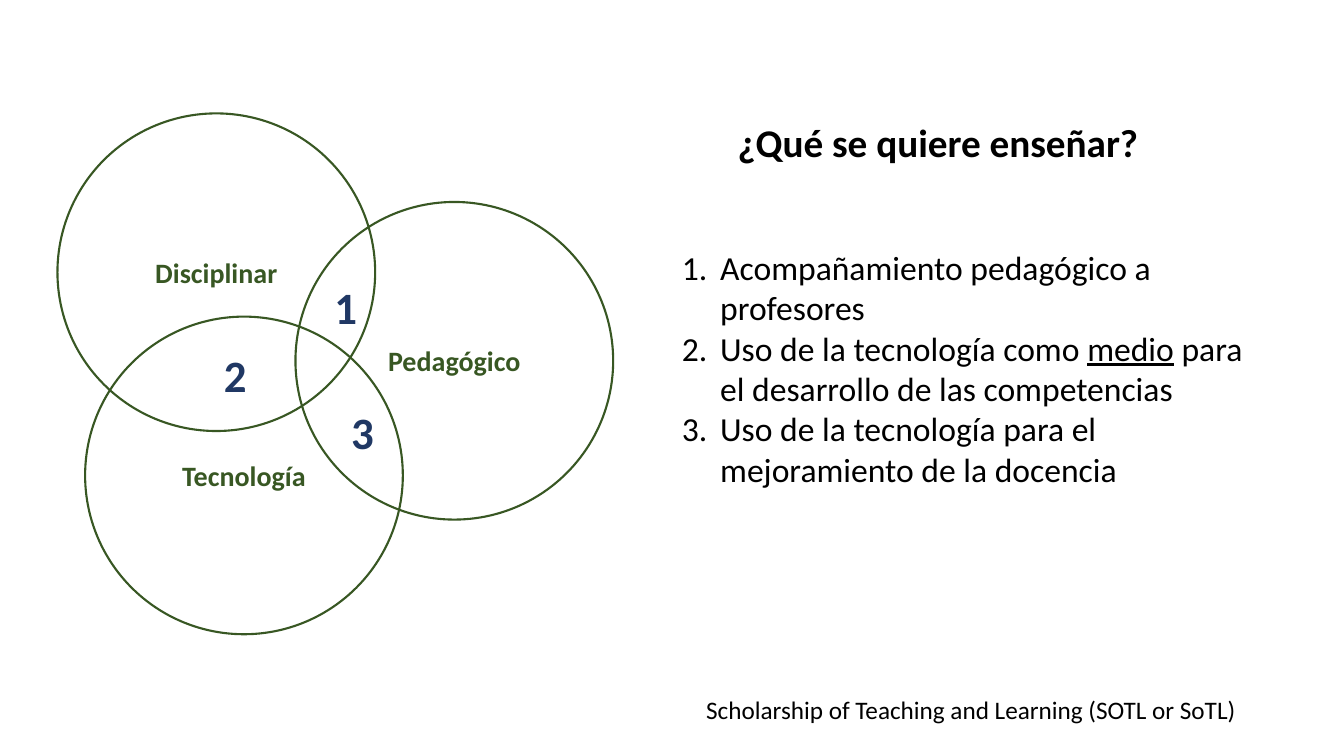
from lxml.etree import SubElement
from pptx import Presentation
from pptx.dml.color import RGBColor
from pptx.enum.shapes import MSO_SHAPE
from pptx.enum.text import MSO_ANCHOR, PP_ALIGN
from pptx.oxml.ns import qn
from pptx.util import Inches, Pt

BLACK = RGBColor(0x00, 0x00, 0x00)
GREEN = RGBColor(0x38, 0x57, 0x23)
NAVY = RGBColor(0x20, 0x38, 0x64)
FONT = "Calibri"

SLIDE_W, SLIDE_H = 13.33, 7.5

# Left and top as shares of the diagram box
CIRCLES = [
    ("Disciplinar", 0, 0),
    ("Pedagógico", 0.43, 0.17),
    ("Tecnología", 0.05, 0.39),
]
DIAMETER = 0.574  # share of the diagram's width
OVERLAPS = [("1", 0.48, 0.31), ("2", 0.28, 0.44), ("3", 0.51, 0.55)]

# Each item is a list of (text, underlined) pieces
ITEMS = [
    [("Acompañamiento pedagógico a profesores", False)],
    [("Uso de la tecnología como ", False), ("medio", True),
     (" para el desarrollo de las competencias", False)],
    [("Uso de la tecnología para el mejoramiento de la docencia", False)],
]


def format_runs(tf, size, color, bold=False, align=PP_ALIGN.LEFT):
    for p in tf.paragraphs:
        p.alignment = align
        for r in p.runs:
            r.font.name, r.font.size, r.font.bold = FONT, Pt(size), bold
            r.font.color.rgb = color


def add_text(s, box):
    tf = s.shapes.add_textbox(*map(Inches, box)).text_frame
    tf.word_wrap = True
    return tf


def add_title(s, box, text):
    sp = s.shapes.title
    sp.left, sp.top, sp.width, sp.height = map(Inches, box)
    tf = sp.text_frame
    tf.text = text
    tf.vertical_anchor = MSO_ANCHOR.TOP
    format_runs(tf, 28, BLACK, bold=True)


def add_venn(s, box):
    left, top, width, height = box
    side = DIAMETER * width

    # Labelled circles
    for label, x, y in CIRCLES:
        place = (left + x * width, top + y * height, side, side)
        sp = s.shapes.add_shape(MSO_SHAPE.OVAL, *map(Inches, place))
        sp.shadow.inherit = False
        sp.fill.background()
        sp.line.color.rgb, sp.line.width = GREEN, Pt(1.5)
        tf = sp.text_frame
        tf.text = label
        tf.vertical_anchor = MSO_ANCHOR.MIDDLE
        format_runs(tf, 20, GREEN, bold=True, align=PP_ALIGN.CENTER)

    # Numbers on the overlaps
    for number, x, y in OVERLAPS:
        tf = add_text(s, (left + x * width, top + y * height, 0.45, 0.64))
        tf.text = number
        format_runs(tf, 32, NAVY, bold=True, align=PP_ALIGN.CENTER)


def add_numbered_list(s, box, items):
    tf = add_text(s, box)
    for i, pieces in enumerate(items):
        p = tf.paragraphs[0] if i == 0 else tf.add_paragraph()
        for text, underlined in pieces:
            r = p.add_run()
            r.text = text
            r.font.underline = underlined
        # Hanging indent with automatic numbers
        pPr = p._p.get_or_add_pPr()
        pPr.set("marL", str(Inches(0.38)))
        pPr.set("indent", str(-Inches(0.38)))
        SubElement(pPr, qn("a:buFont"), typeface="+mj-lt")
        SubElement(pPr, qn("a:buAutoNum"), type="arabicPeriod")
    format_runs(tf, 24, BLACK)


def add_footer(s, box, text):
    tf = add_text(s, box)
    tf.text = text
    format_runs(tf, 18, BLACK)


def main():
    prs = Presentation()
    prs.slide_width, prs.slide_height = Inches(SLIDE_W), Inches(SLIDE_H)
    s = prs.slides.add_slide(prs.slide_layouts[5])  # title only

    right = SLIDE_W / 2
    top = 0.15 * SLIDE_H
    add_venn(s, (0.57, top, 5.49, 5.17))
    add_numbered_list(s, (right, 0.32 * SLIDE_H, 6.06, 2.52), ITEMS)
    add_footer(s, (right + 0.24, 6.84, 5.82, 0.4),
               "Scholarship of Teaching and Learning (SOTL or SoTL)")
    add_title(s, (right + 0.55, top, 4.4, 0.57), "¿Qué se quiere enseñar?")

    prs.save("out.pptx")


if __name__ == "__main__":
    main()
